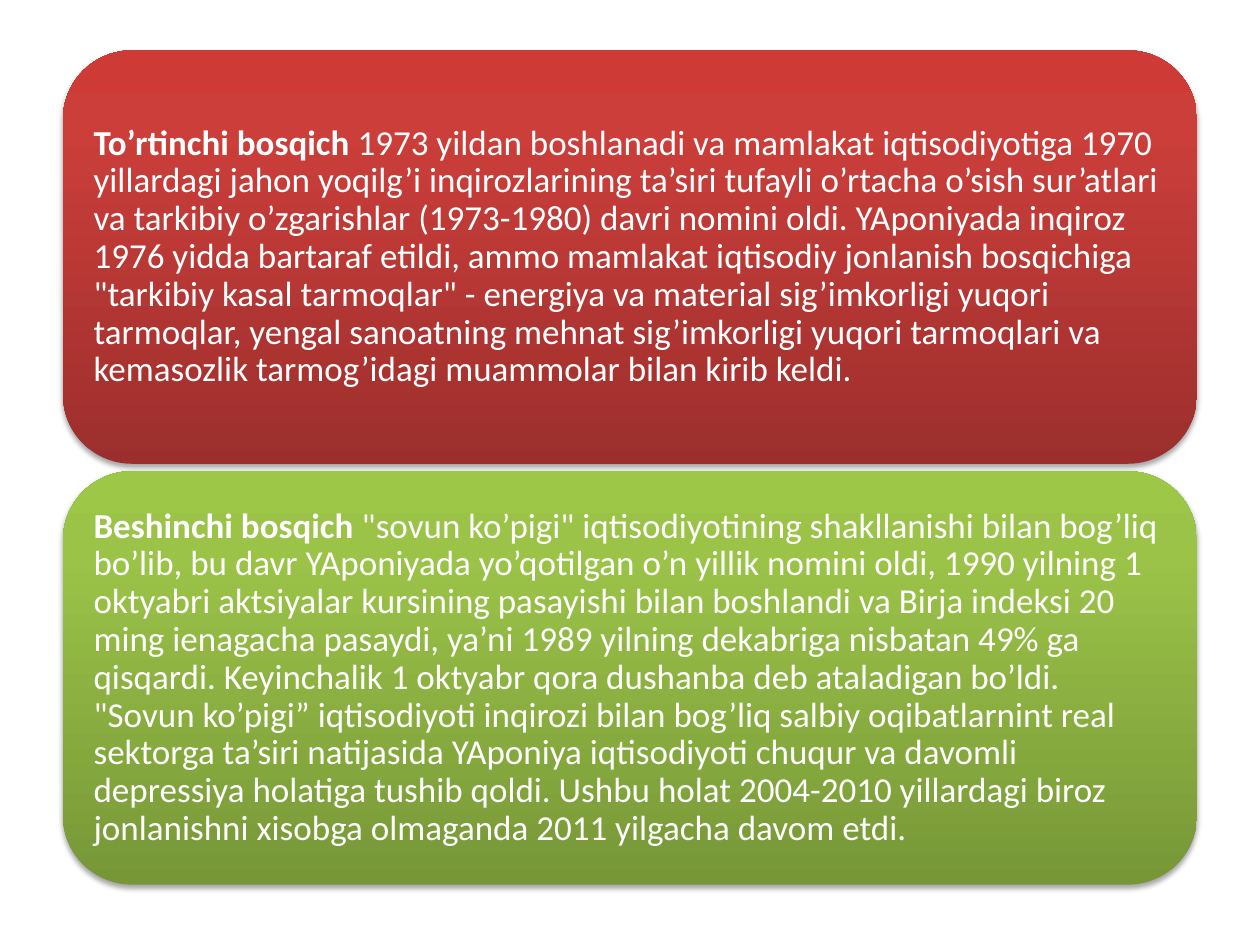
import pptx
import pptx.dml.color
import pptx.enum.shapes
import pptx.enum.text
import pptx.oxml
import pptx.oxml.ns
import pptx.util
from pptx.util import Pt

# Content: bold lead, body text, gradient name
STAGES = [
    (
        "To’rtinchi bosqich",
        " 1973 yildan boshlanadi va mamlakat iqtisodiyotiga 1970 yillardagi jahon "
        "yoqilg’i inqirozlarining ta’siri tufayli o’rtacha o’sish sur’atlari va tarkibiy "
        "o’zgarishlar (1973-1980) davri nomini oldi. YAponiyada inqiroz 1976 yidda "
        "bartaraf etildi, ammo mamlakat iqtisodiy jonlanish bosqichiga \"tarkibiy kasal "
        "tarmoqlar\" - energiya va material sig’imkorligi yuqori tarmoqlar, yengal "
        "sanoatning mehnat sig’imkorligi yuqori tarmoqlari va kemasozlik tarmog’idagi "
        "muammolar bilan kirib keldi.",
        "red",
    ),
    (
        "Beshinchi bosqich",
        " \"sovun ko’pigi\" iqtisodiyotining shakllanishi bilan bog’liq bo’lib, bu davr "
        "YAponiyada yo’qotilgan o’n yillik nomini oldi, 1990 yilning 1 oktyabri "
        "aktsiyalar kursining pasayishi bilan boshlandi va Birja indeksi 20 ming "
        "ienagacha pasaydi, ya’ni 1989 yilning dekabriga nisbatan 49% ga qisqardi. "
        "Keyinchalik 1 oktyabr qora dushanba deb ataladigan bo’ldi. \"Sovun ko’pigi” "
        "iqtisodiyoti inqirozi bilan bog’liq salbiy oqibatlarnint real sektorga ta’siri "
        "natijasida YAponiya iqtisodiyoti chuqur va davomli depressiya holatiga tushib "
        "qoldi. Ushbu holat 2004-2010 yillardagi biroz jonlanishni xisobga olmaganda "
        "2011 yilgacha davom etdi.",
        "green",
    ),
]

THEME = {
    "font": "Calibri",
    "size": 20,
    "text": "FFFFFF",
    "shadow": "000000",
    # Gradient stops from bottom to top: percent, colour
    "red": [(0, "9C2F2D"), (80, "CB3E3A"), (100, "CE3B37")],
    "green": [(0, "779737"), (80, "9BC348"), (100, "9DC746")],
}

SLIDE_WIDTH, SLIDE_HEIGHT = 720, 540
MARGIN, TOP = 36, 28.8
PANEL_HEIGHT, GAP, INSET = 236.2, 4.3, 6


def add_text(paragraph, text, *, bold=False, size=THEME["size"], color=THEME["text"]):
    run = paragraph.add_run()
    run.text = text
    run.font.name = THEME["font"]
    run.font.size = Pt(size)
    run.font.bold = bold
    run.font.color.rgb = pptx.dml.color.RGBColor.from_string(color)


def append_xml(parent, markup):
    namespace = pptx.oxml.ns.nsdecls("a")
    parent.append(pptx.oxml.parse_xml(markup.replace(">", f" {namespace}>", 1)))


def set_gradient(shape, stops):
    shape.fill.gradient()
    shape.fill.gradient_angle = 90
    stop_list = shape.element.spPr.find(".//" + pptx.oxml.ns.qn("a:gsLst"))
    for stop in list(stop_list):
        stop_list.remove(stop)
    for percent, color in stops:
        append_xml(stop_list, f'<a:gs pos="{percent * 1000}"><a:srgbClr val="{color}"/></a:gs>')


def set_shadow(shape):
    shape.shadow.inherit = False
    effects = shape.element.spPr.find(pptx.oxml.ns.qn("a:effectLst"))
    append_xml(
        effects,
        f'<a:outerShdw blurRad="{Pt(3.1)}" dist="{Pt(1.8)}" dir="5400000" rotWithShape="0">'
        f'<a:srgbClr val="{THEME["shadow"]}"><a:alpha val="35000"/></a:srgbClr></a:outerShdw>',
    )


def add_panel(slide, top, lead, body, gradient):
    shape = slide.shapes.add_shape(
        pptx.enum.shapes.MSO_SHAPE.ROUNDED_RECTANGLE,
        Pt(MARGIN), Pt(top), Pt(SLIDE_WIDTH - 2 * MARGIN), Pt(PANEL_HEIGHT),
    )
    set_gradient(shape, THEME[gradient])
    shape.line.fill.background()
    set_shadow(shape)

    frame = shape.text_frame
    frame.word_wrap = True
    frame.vertical_anchor = pptx.enum.text.MSO_ANCHOR.MIDDLE
    frame.margin_left = frame.margin_right = Pt(INSET)
    frame.margin_top = frame.margin_bottom = Pt(INSET)
    paragraph = frame.paragraphs[0]
    paragraph.alignment = pptx.enum.text.PP_ALIGN.LEFT
    paragraph.line_spacing = 0.9
    paragraph.space_after = Pt(0.35 * THEME["size"])
    add_text(paragraph, lead, bold=True)
    add_text(paragraph, body)


def main():
    presentation = pptx.Presentation()
    presentation.slide_width = Pt(SLIDE_WIDTH)
    presentation.slide_height = Pt(SLIDE_HEIGHT)
    slide = presentation.slides.add_slide(presentation.slide_layouts[6])

    # Stacked panels, one per stage
    for index, (lead, body, gradient) in enumerate(STAGES):
        add_panel(slide, TOP + index * (PANEL_HEIGHT + GAP), lead, body, gradient)

    presentation.save("out.pptx")


if __name__ == "__main__":
    main()
